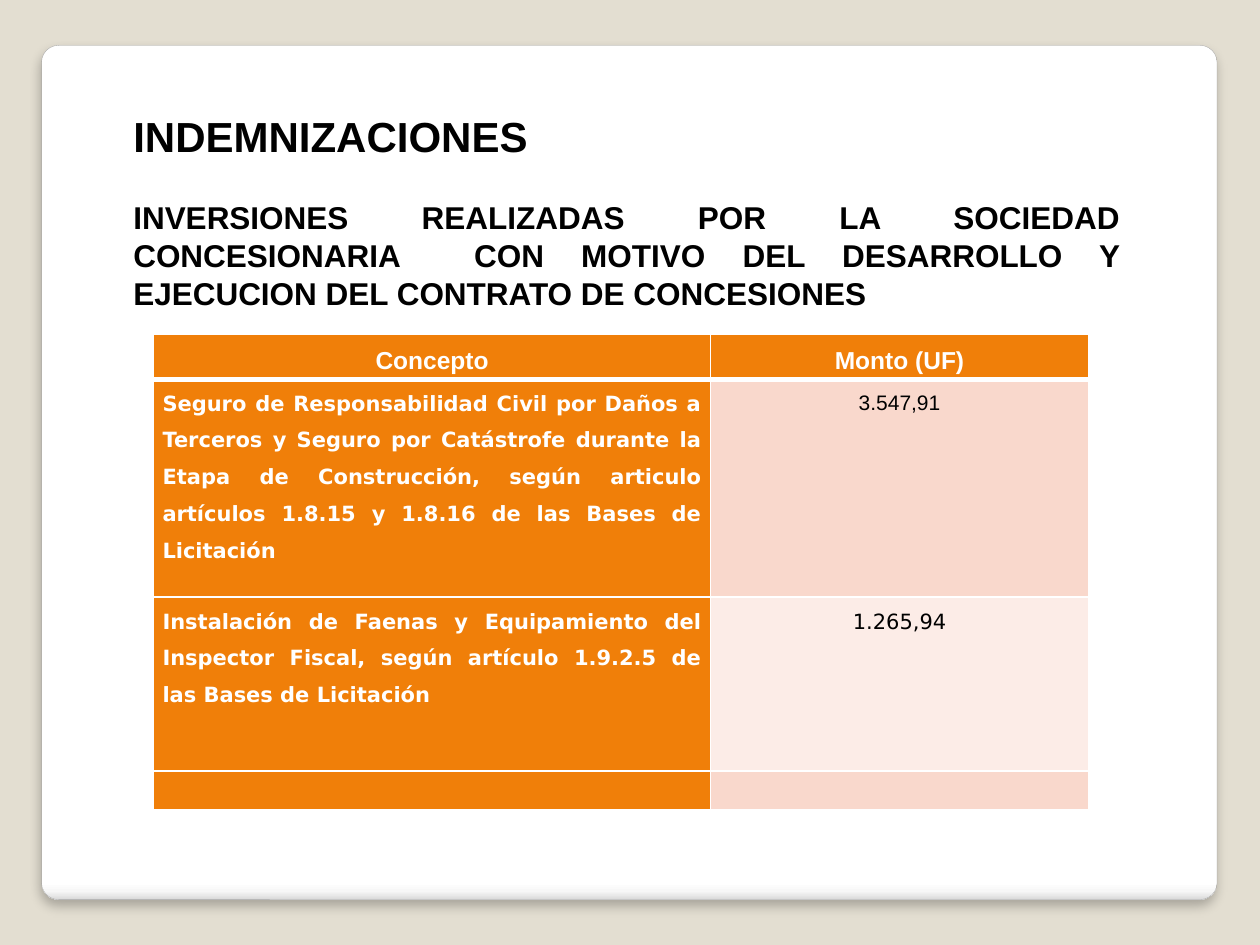
from lxml import etree
from pptx import Presentation
from pptx.dml.color import RGBColor
from pptx.enum.shapes import MSO_SHAPE
from pptx.enum.text import PP_ALIGN
from pptx.oxml import parse_xml
from pptx.oxml.ns import qn, nsdecls
from pptx.util import Inches, Pt

HUES = {
    "back": "E3DED1", "white": "FFFFFF", "black": "000000", "edge": "A4A4A4",
    "orange": "F07F09", "rose": "F9D8CC", "pale": "FCECE7",
}


def write(par, text, size=12, font="Arial", hue="black", bold=False,
          align=PP_ALIGN.JUSTIFY, before=0, after=0, line=None):
    par.alignment = align
    par.space_before, par.space_after = Pt(before), Pt(after)
    par.line_spacing = line
    run = par.add_run()
    run.text = text
    run.font.size, run.font.name, run.font.bold = Pt(size), font, bold
    run.font.color.rgb = RGBColor.from_string(HUES[hue])


def rule(cell, widths):
    """Draw white cell borders; widths maps a side (L, R, T, B) to points."""
    props = cell._tc.get_or_add_tcPr()
    for spot, (side, width) in enumerate(widths.items()):
        props.insert(spot, parse_xml(
            f'<a:ln{side} {nsdecls("a")} w="{Pt(width)}"><a:solidFill>'
            f'<a:srgbClr val="{HUES["white"]}"/></a:solidFill></a:ln{side}>'))


prs = Presentation()
prs.slide_width, prs.slide_height = Inches(10), Inches(7.5)
slide = prs.slides.add_slide(prs.slide_layouts[6])
slide.background.fill.solid()
slide.background.fill.fore_color.rgb = RGBColor.from_string(HUES["back"])

# Rounded panel with a shaded lower edge and a soft shadow
panel = slide.shapes.add_shape(
    MSO_SHAPE.ROUNDED_RECTANGLE,
    Inches(0.33), Inches(0.36), Inches(9.33), Inches(6.78))
panel.adjustments[0] = 0.02
panel.line.color.rgb = RGBColor.from_string(HUES["edge"])
panel.line.width = Pt(0.16)
panel.fill.gradient()
panel.fill.gradient_angle = 270
props = panel._element.spPr
stops = props.find(".//" + qn("a:gsLst"))
for old in list(stops):
    stops.remove(old)
for place, hue in [(0, "FFFFFF"), (98, "FFFFFF"), (99, "F7F7F7"), (100, "DADADA")]:
    stop = etree.SubElement(stops, qn("a:gs"), pos=str(place * 1000))
    etree.SubElement(stop, qn("a:srgbClr"), val=hue)
panel.shadow.inherit = False
shade = etree.SubElement(
    props.find(qn("a:effectLst")), qn("a:outerShdw"), blurRad=str(Pt(6)),
    dist=str(Pt(4)), dir="5400000", algn="t", rotWithShape="0")
tint = etree.SubElement(shade, qn("a:srgbClr"), val=HUES["black"])
etree.SubElement(tint, qn("a:alpha"), val="25000")

# Headings
frame = slide.shapes.add_textbox(
    Inches(0.96), Inches(0.83), Inches(8.03), Inches(1.71)).text_frame
frame.word_wrap = True
write(frame.paragraphs[0], "INDEMNIZACIONES", size=24, bold=True)
write(frame.add_paragraph(),
      "INVERSIONES REALIZADAS POR LA SOCIEDAD CONCESIONARIA  CON MOTIVO DEL "
      "DESARROLLO Y EJECUCION DEL CONTRATO DE CONCESIONES",
      size=18, bold=True, before=21)

# Table of amounts
head = {"size": 14, "hue": "white", "bold": True, "align": PP_ALIGN.CENTER}
item = {"font": "DejaVu Sans", "hue": "white", "bold": True}
value = {"align": PP_ALIGN.CENTER}
rows = [
    (0.36, ("Concepto", "orange", head), ("Monto (UF)", "orange", head)),
    (1.73, ("Seguro de Responsabilidad Civil por Daños a Terceros y Seguro por "
            "Catástrofe durante la Etapa de Construcción, según articulo "
            "artículos 1.8.15 y 1.8.16 de las Bases de Licitación",
            "orange", item),
     ("3.547,91", "rose", value)),
    (1.38, ("Instalación de Faenas y Equipamiento del Inspector Fiscal, según "
            "artículo 1.9.2.5 de las Bases de Licitación", "orange", item),
     ("1.265,94", "pale", {**value, "font": "DejaVu Sans"})),
    (0.31, ("", "orange", item), ("", "rose", value)),
]
table = slide.shapes.add_table(
    len(rows), 2, Inches(1.22), Inches(2.65), Inches(7.42), Inches(3.78)).table
for col, width in zip(table.columns, (4.42, 3)):
    col.width = Inches(width)
for r, (height, *cells) in enumerate(rows):
    table.rows[r].height = Inches(height)
    for c, (text, hue, style) in enumerate(cells):
        cell = table.cell(r, c)
        cell.margin_left = cell.margin_right = Inches(0.07)
        cell.margin_top = cell.margin_bottom = 0
        cell.fill.solid()
        cell.fill.fore_color.rgb = RGBColor.from_string(HUES[hue])
        rule(cell, {"L": 1, "R": 1, "T": 3 if r == 1 else 1, "B": 3 if r == 0 else 1})
        if text:
            write(cell.text_frame.paragraphs[0], text, line=1.5, after=10, **style)
        else:
            cell.text_frame.paragraphs[0].font.size = Pt(12)

prs.save("out.pptx")
